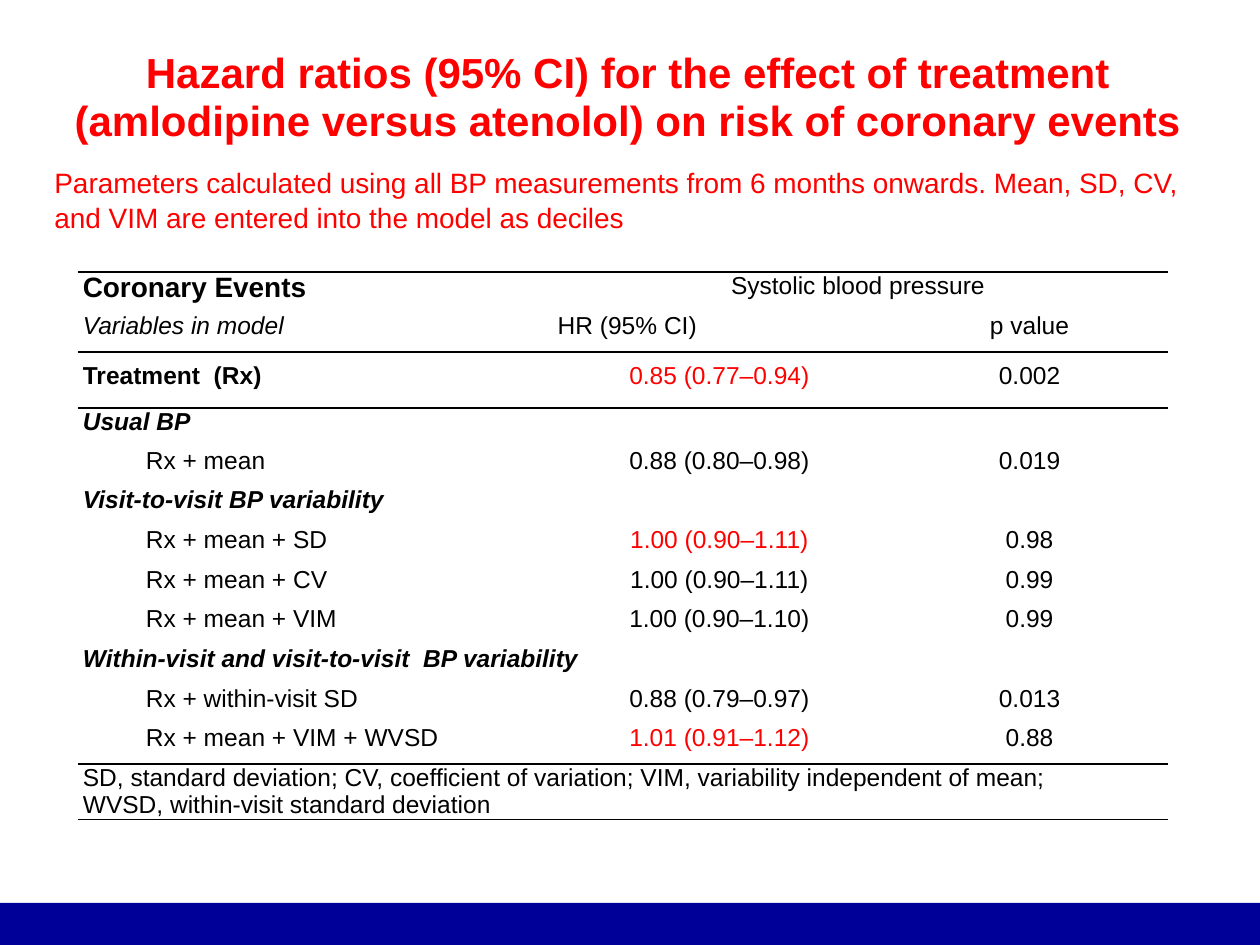
from lxml.etree import SubElement
from pptx import Presentation
from pptx.dml.color import RGBColor
from pptx.enum.shapes import MSO_SHAPE
from pptx.enum.text import MSO_ANCHOR, PP_ALIGN
from pptx.oxml.ns import qn
from pptx.util import Pt

BLACK = RGBColor(0, 0, 0)
RED = RGBColor(0xFF, 0, 0)
NAVY = RGBColor(0, 0, 0x99)
FONT = "Arial"
NO_GRID_STYLE = "{2D5ABB26-0587-4C30-8999-92F81FD0307C}"

TITLE = ("Hazard ratios (95% CI) for the effect of treatment\v"
         "(amlodipine versus atenolol) on risk of coronary events")
SUBTITLE = ("Parameters calculated using all BP measurements from 6 months onwards. "
            "Mean, SD, CV, and VIM are entered into the model as deciles")
FOOTNOTE = ("SD, standard deviation; CV, coefficient of variation; VIM, variability "
            "independent of mean;\vWVSD, within-visit standard deviation")

HEADING = {"size": Pt(16), "bold": True}
BOLD = {"bold": True}
ITALIC = {"italic": True}
GROUP = {"bold": True, "italic": True}
PLAIN = {}

# Row: label, label format, hazard ratio, hazard ratio colour, p value
ROWS = [
    ("Coronary Events", HEADING, "Systolic blood pressure", BLACK, ""),
    ("Variables in model", ITALIC, "HR (95% CI)", BLACK, "p value"),
    ("Treatment  (Rx)", BOLD, "0.85 (0.77–0.94)", RED, "0.002"),
    ("Usual BP", GROUP, "", BLACK, ""),
    ("Rx + mean", PLAIN, "0.88 (0.80–0.98)", BLACK, "0.019"),
    ("Visit-to-visit BP variability", GROUP, "", BLACK, ""),
    ("Rx + mean + SD", PLAIN, "1.00 (0.90–1.11)", RED, "0.98"),
    ("Rx + mean + CV", PLAIN, "1.00 (0.90–1.11)", BLACK, "0.99"),
    ("Rx + mean + VIM", PLAIN, "1.00 (0.90–1.10)", BLACK, "0.99"),
    ("Within-visit and visit-to-visit  BP variability", GROUP, "", BLACK, ""),
    ("Rx + within-visit SD", PLAIN, "0.88 (0.79–0.97)", BLACK, "0.013"),
    ("Rx + mean + VIM + WVSD", PLAIN, "1.01 (0.91–1.12)", RED, "0.88"),
    (FOOTNOTE, PLAIN, "", BLACK, ""),
]
COLUMN_WIDTHS = [268.5, 196, 158.5]
ROW_HEIGHTS = [22.85, 22.85, 32, 22.3] + [22.65] * 8 + [31.4]
HEADER, TREATMENT, FOOT = 1, 2, len(ROWS) - 1
MERGES = [((0, 1), (0, 2)), ((5, 0), (5, 1)), ((9, 0), (9, 1)), ((FOOT, 0), (FOOT, 2))]
RULES = {0: ["T"], HEADER: ["B"], TREATMENT: ["T"], FOOT - 1: ["B"], FOOT: ["T", "B"]}


def write(frame, text, align=PP_ALIGN.LEFT, **font_format):
    paragraph = frame.paragraphs[0]
    paragraph.text = text
    paragraph.alignment = align
    values = {"name": FONT, "size": Pt(14), "bold": False, "italic": False} | font_format
    color = values.pop("color", BLACK)
    for font in [paragraph.font] + [run.font for run in paragraph.runs]:
        for name, value in values.items():
            setattr(font, name, value)
        font.color.rgb = color
    return paragraph


def add_text(slide, box, text, **font_format):
    frame = slide.shapes.add_textbox(*map(Pt, box)).text_frame
    frame.word_wrap = True
    return frame, write(frame, text, **font_format)


def add_rule(cell, side):
    """Draw a black line on the cell's side, T or B."""
    line = SubElement(cell._tc.get_or_add_tcPr(), qn(f"a:ln{side}"), w=str(Pt(1)))
    fill = SubElement(line, qn("a:solidFill"))
    SubElement(fill, qn("a:srgbClr"), val=str(BLACK))


def add_results_table(slide):
    shape = slide.shapes.add_table(len(ROWS), len(COLUMN_WIDTHS), Pt(44.6), Pt(155.5),
                                   Pt(sum(COLUMN_WIDTHS)), Pt(sum(ROW_HEIGHTS)))
    table = shape.table
    table.first_row = table.horz_banding = False
    table._tbl.tblPr.find(qn("a:tableStyleId")).text = NO_GRID_STYLE
    for column, width in zip(table.columns, COLUMN_WIDTHS):
        column.width = Pt(width)
    for row, height in zip(table.rows, ROW_HEIGHTS):
        row.height = Pt(height)
    for start, end in MERGES:
        table.cell(*start).merge(table.cell(*end))

    for r, (label, label_format, ratio, ratio_color, p_value) in enumerate(ROWS):
        contents = [(label, PP_ALIGN.LEFT, label_format),
                    (ratio, PP_ALIGN.CENTER, {"color": ratio_color}),
                    (p_value, PP_ALIGN.CENTER, PLAIN)]
        for c, (text, align, font_format) in enumerate(contents):
            cell = table.cell(r, c)
            cell.margin_left = cell.margin_right = Pt(2.75)
            cell.margin_top = Pt(5.75 if r == TREATMENT else 0)
            cell.margin_bottom = 0
            cell.vertical_anchor = MSO_ANCHOR.TOP
            for side in RULES.get(r, []):
                add_rule(cell, side)
            cell.fill.background()
            paragraph = write(cell.text_frame, text, align, **font_format)
            if c == 0 and label.startswith("Rx"):
                paragraph._p.get_or_add_pPr().set("marL", str(Pt(36)))
    table.cell(HEADER, 1).margin_right = Pt(108)


def main():
    presentation = Presentation()
    presentation.slide_width, presentation.slide_height = Pt(720), Pt(540)
    slide = presentation.slides.add_slide(presentation.slide_layouts[6])

    bar = slide.shapes.add_shape(MSO_SHAPE.RECTANGLE, 0, Pt(516), Pt(720), Pt(24))
    bar.shadow.inherit = False
    bar.fill.solid()
    bar.fill.fore_color.rgb = NAVY
    bar.line.fill.background()

    add_results_table(slide)

    frame, paragraph = add_text(slide, (17, 29, 683.5, 33), TITLE, align=PP_ALIGN.CENTER,
                                size=Pt(24), bold=True, color=RED)
    for side in ("left", "right", "top", "bottom"):
        setattr(frame, f"margin_{side}", 0)
    paragraph.line_spacing = 0.95

    _, paragraph = add_text(slide, (24, 90, 682, 46), SUBTITLE, size=Pt(16), color=RED)
    paragraph.line_spacing = 1.05

    presentation.save("out.pptx")


if __name__ == "__main__":
    main()
